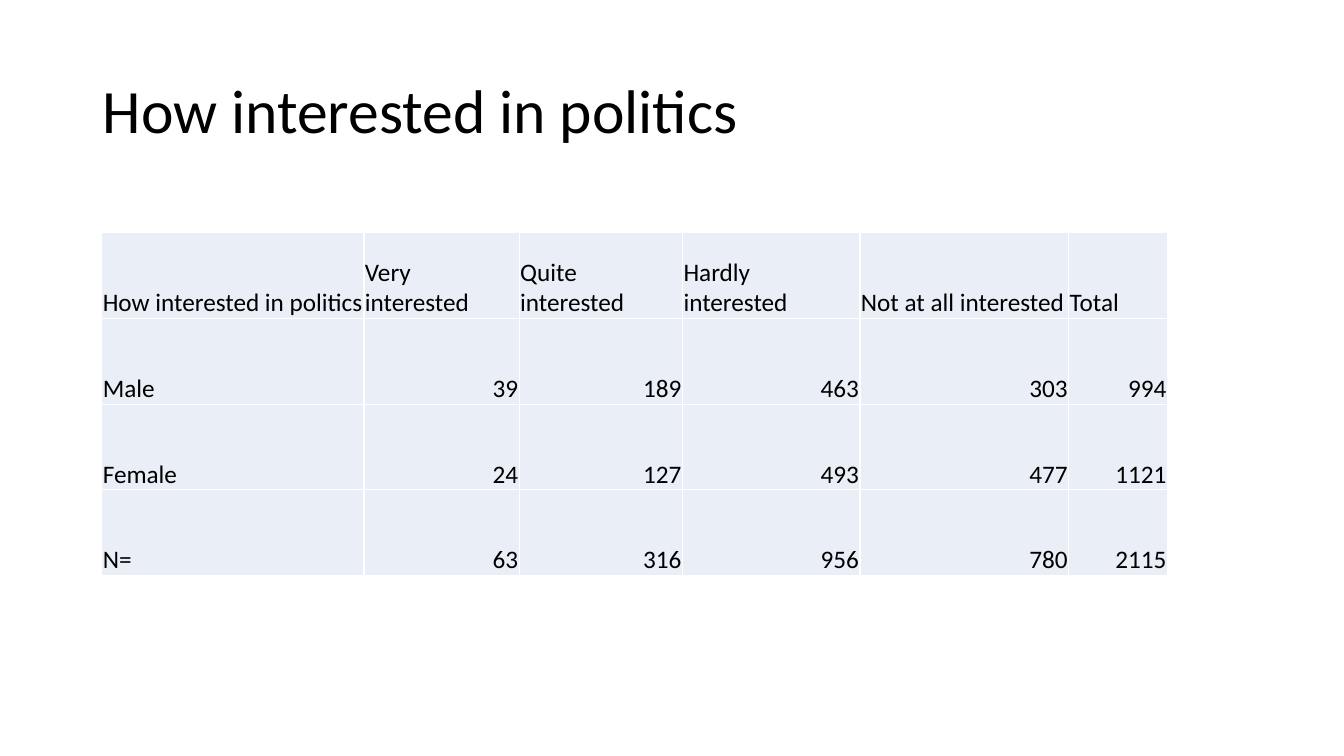
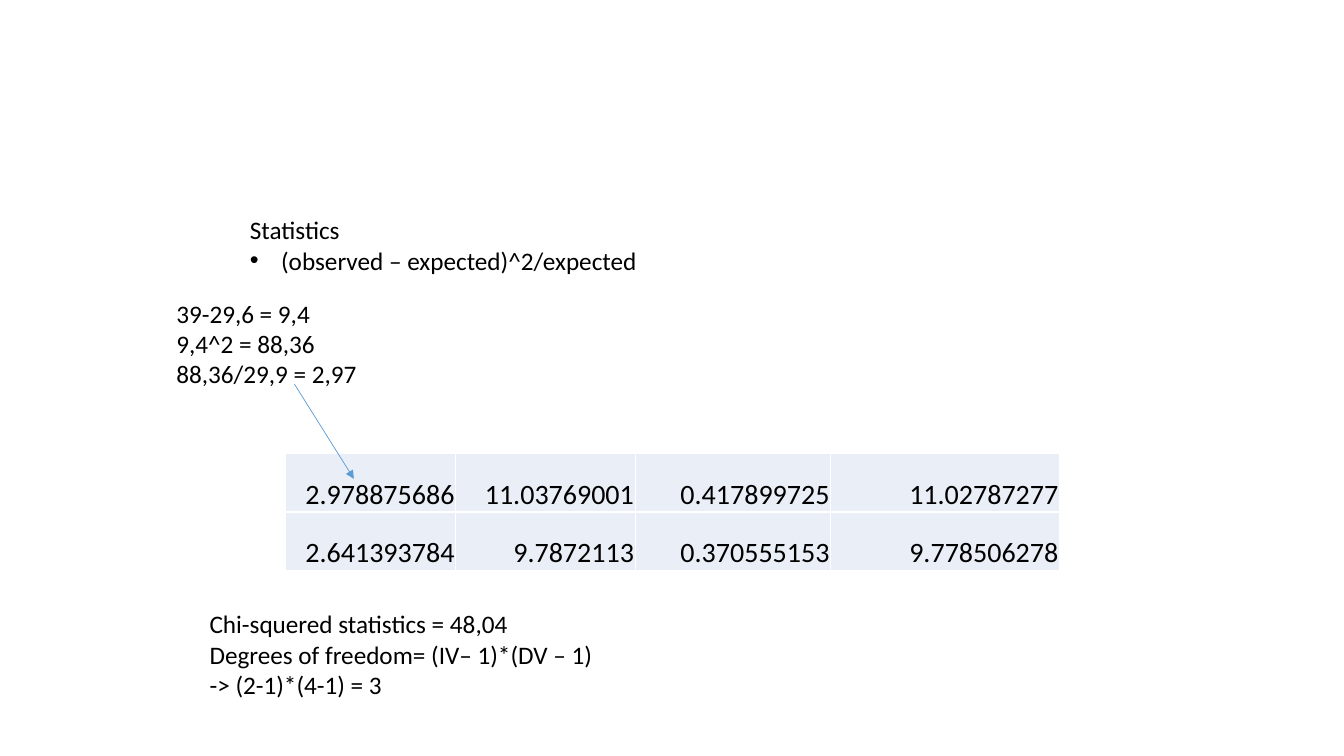
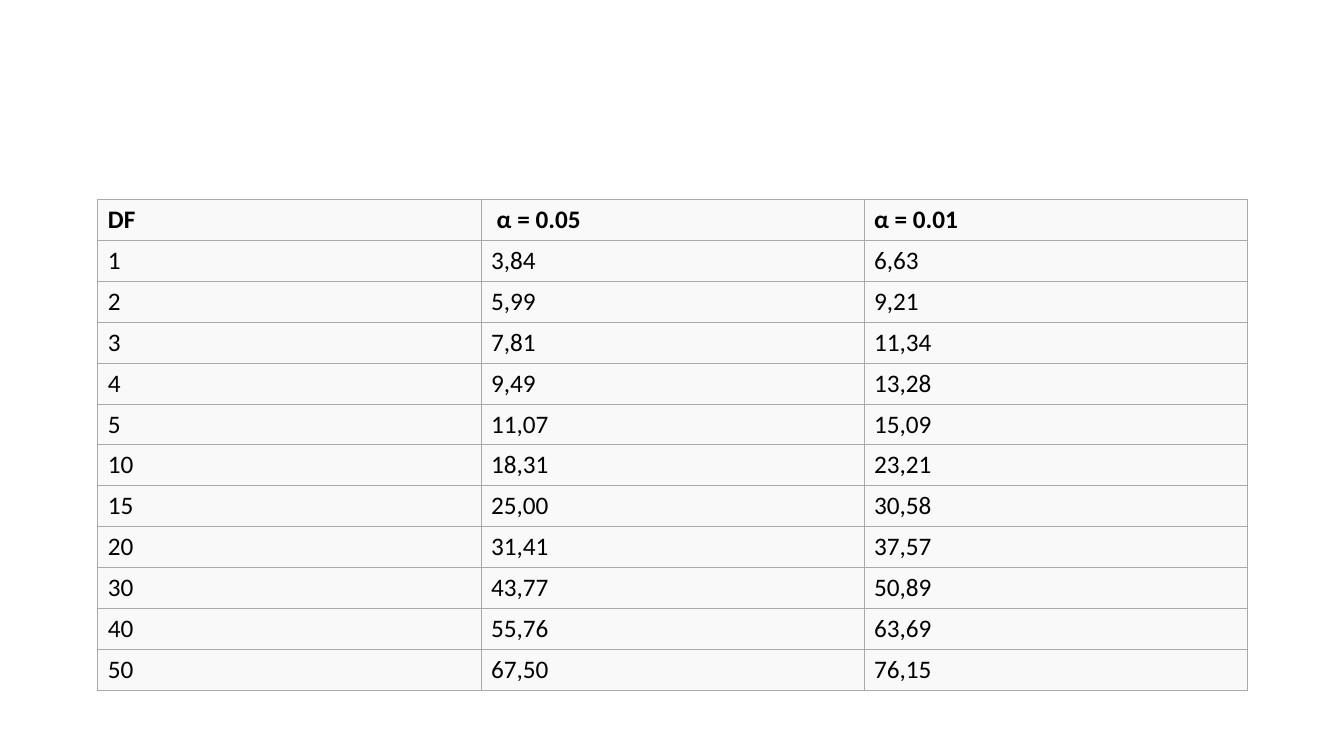
from lxml.etree import SubElement
from pptx import Presentation
from pptx.dml.color import RGBColor
from pptx.enum.shapes import MSO_CONNECTOR
from pptx.enum.text import MSO_ANCHOR, MSO_AUTO_SIZE, PP_ALIGN
from pptx.oxml.ns import qn
from pptx.util import Inches, Pt

COLORS = {"text": "000000", "pale": "EAEFF7", "white": "FFFFFF",
          "arrow": "5B9BD5", "grid": "AAAAAA", "light": "F9F9F9"}
FONT = "Calibri"
TABLE_STYLES = {
    "stats": {"fill": "pale", "border": "white", "width": 1,
              "anchor": MSO_ANCHOR.BOTTOM, "insets": (0.01, 0.01, 0.01, 0)},
    "critical": {"fill": "light", "border": "grid", "width": 0.6,
                 "anchor": MSO_ANCHOR.MIDDLE, "insets": (0.1, 0.05, 0.1, 0.05)},
}
SIDES = ("left", "top", "right", "bottom")


def rgb(name):
    return RGBColor.from_string(COLORS[name])


def set_all(target, values):
    for name, value in values.items():
        setattr(target, name, value)


class Deck:
    def __init__(self):
        self.prs = Presentation()
        set_all(self.prs, {"slide_width": Inches(13.33), "slide_height": Inches(7.5)})
        self.s = None

    def slide(self):
        self.s = self.prs.slides.add_slide(self.prs.slide_layouts[6])

    def run(self, p, text, size=18, bold=False):
        r = p.add_run()
        r.text = text
        set_all(r.font, {"name": FONT, "size": Pt(size), "bold": bold})
        r.font.color.rgb = rgb("text")

    def title(self, text):
        tf = self.s.shapes.add_textbox(*map(Inches, (0.92, 0.4, 11.5, 1.45))).text_frame
        set_all(tf, {"word_wrap": True, "vertical_anchor": MSO_ANCHOR.MIDDLE})
        tf.paragraphs[0].line_spacing = 0.9
        self.run(tf.paragraphs[0], text, 44)

    def text(self, box, lines, wrap=False, bullets=()):
        tf = self.s.shapes.add_textbox(*map(Inches, box)).text_frame
        set_all(tf, {"word_wrap": wrap, "auto_size": MSO_AUTO_SIZE.SHAPE_TO_FIT_TEXT})
        for i, line in enumerate(lines):
            p = tf.add_paragraph() if i else tf.paragraphs[0]
            if i in bullets:
                self.bullet(p)
            self.run(p, line)

    def bullet(self, p):
        pPr = p._p.get_or_add_pPr()
        pPr.set("marL", str(Inches(0.31)))
        pPr.set("indent", str(Inches(-0.31)))
        SubElement(pPr, qn("a:buFont"), typeface="Arial")
        SubElement(pPr, qn("a:buChar"), char="•")

    def arrow(self, start, end):
        line = self.s.shapes.add_connector(MSO_CONNECTOR.STRAIGHT, *map(Inches, start + end))
        line.line.color.rgb = rgb("arrow")
        line.line.width = Pt(0.5)
        spPr = line._element.spPr
        SubElement(spPr.find(qn("a:ln")), qn("a:tailEnd"), type="triangle")
        SubElement(spPr, qn("a:effectLst"))

    def table(self, at, widths, height, rows, style, size=18, bold_header=False):
        look = TABLE_STYLES[style]
        frame = self.s.shapes.add_table(
            len(rows), len(widths), *map(Inches, at + (sum(widths), height * len(rows))))
        table = frame.table
        set_all(table, {"first_row": False, "horz_banding": False})
        for column, width in zip(table.columns, widths):
            column.width = Inches(width)
        for i, values in enumerate(rows):
            table.rows[i].height = Inches(height)
            for j, value in enumerate(values):
                cell = table.cell(i, j)
                self.format_cell(cell, look)
                p = cell.text_frame.paragraphs[0]
                if not isinstance(value, str):
                    p.alignment = PP_ALIGN.RIGHT
                self.run(p, str(value), size, bold_header and i == 0)

    def format_cell(self, cell, look):
        cell.vertical_anchor = look["anchor"]
        set_all(cell, {f"margin_{side}": Inches(inset)
                       for side, inset in zip(SIDES, look["insets"])})
        tcPr = cell._tc.get_or_add_tcPr()
        for side in "LRTB":
            ln = SubElement(tcPr, qn(f"a:ln{side}"), w=str(Pt(look["width"])))
            fill = SubElement(ln, qn("a:solidFill"))
            SubElement(fill, qn("a:srgbClr"), val=COLORS[look["border"]])
        cell.fill.solid()
        cell.fill.fore_color.rgb = rgb(look["fill"])


def main():
    deck = Deck()

    deck.slide()
    deck.title("How interested in politics")
    deck.table((1.01, 2.31), (2.6, 1.54, 1.62, 1.76, 2.07, 0.98), 0.85, [
        ("How interested in politics", "Very interested", "Quite interested",
         "Hardly interested", "Not at all interested", "Total"),
        ("Male", 39, 189, 463, 303, 994),
        ("Female", 24, 127, 493, 477, 1121),
        ("N=", 63, 316, 956, 780, 2115),
    ], "stats")

    deck.slide()
    deck.table((2.83, 4.5), (1.69, 1.78, 1.94, 2.27), 0.58, [
        (2.978875686, 11.03769001, 0.417899725, 11.02787277),
        (2.641393784, 9.7872113, 0.370555153, 9.778506278),
    ], "stats", size=20)
    deck.text((2.38, 2.08, 7.79, 1.01),
              ["Statistics", "(observed – expected)^2/expected"], wrap=True, bullets=(1,))
    deck.arrow((2.92, 3.81), (3.51, 4.75))
    deck.text((1.65, 2.91, 2.01, 1.01),
              ["39-29,6 = 9,4", "9,4^2 = 88,36", "88,36/29,9 = 2,97"])
    deck.text((1.98, 5.99, 4.05, 1.01),
              ["Chi-squered statistics = 48,04", "Degrees of freedom= (IV– 1)*(DV – 1)",
               "-> (2-1)*(4-1) = 3"])

    deck.slide()
    deck.table((0.97, 1.98), (3.8,) * 3, 0.4, [
        ("DF", " α = 0.05", "α = 0.01"),
        ("1", "3,84", "6,63"),
        ("2", "5,99", "9,21"),
        ("3", "7,81", "11,34"),
        ("4", "9,49", "13,28"),
        ("5", "11,07", "15,09"),
        ("10", "18,31", "23,21"),
        ("15", "25,00", "30,58"),
        ("20", "31,41", "37,57"),
        ("30", "43,77", "50,89"),
        ("40", "55,76", "63,69"),
        ("50", "67,50", "76,15"),
    ], "critical", bold_header=True)

    deck.prs.save("out.pptx")


if __name__ == "__main__":
    main()
